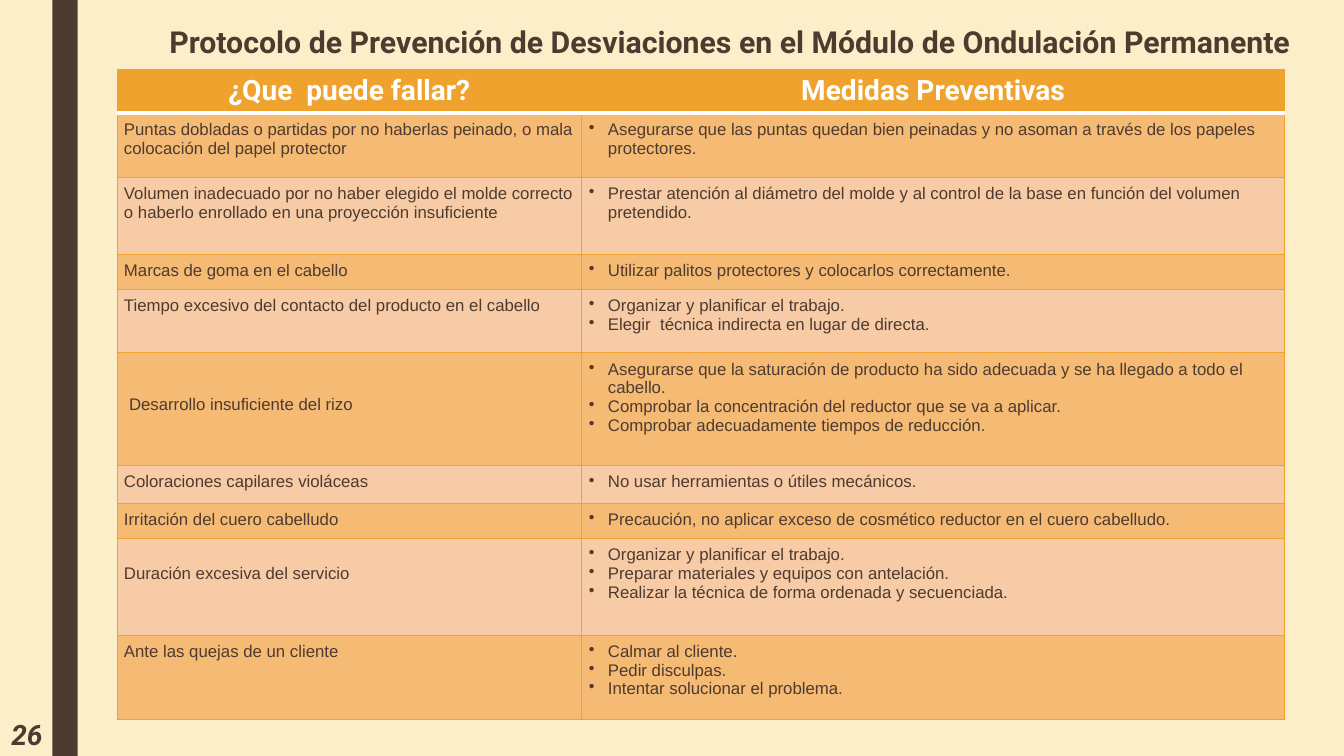
"""Build the slide on preventing deviations in the waving module."""
from dataclasses import dataclass

from lxml import etree
from pptx import Presentation
from pptx import util as u
from pptx.dml.color import RGBColor
from pptx.enum import shapes, text
from pptx.oxml import ns


@dataclass(frozen=True)
class Theme:
    cream: str = "FBEEC9"
    brown: str = "4E3B30"
    orange: str = "F0A22E"
    dark_band: str = "F5BA74"
    light_band: str = "F7CBA5"
    white: str = "FFFFFF"
    heading_font: str = "Roboto"
    body_font: str = "Arial"
    title_size: float = 21.6
    heading_size: float = 20
    body_size: float = 12


theme = Theme()


def style(paragraph, font, size, color, bold=False):
    paragraph.font.name = font
    paragraph.font.size = u.Pt(size)
    paragraph.font.bold = bold
    paragraph.font.color.rgb = RGBColor.from_string(color)


def paint_cell(cell, fill, bottom_color=theme.orange, bottom_width=0.5, top_color=theme.orange, top_width=0.5):
    cell.fill.solid()
    cell.fill.fore_color.rgb = RGBColor.from_string(fill)
    edges = [("lnL", theme.orange, 0.5), ("lnR", theme.orange, 0.5),
             ("lnT", top_color, top_width), ("lnB", bottom_color, bottom_width)]
    properties = cell._tc.get_or_add_tcPr()
    for position, (edge, color, width) in enumerate(edges):
        line = etree.Element(ns.qn(f"a:{edge}"), w=str(u.Pt(width)))
        solid = etree.SubElement(line, ns.qn("a:solidFill"))
        etree.SubElement(solid, ns.qn("a:srgbClr"), val=color)
        properties.insert(position, line)


headings = ["¿Que  puede fallar?", "Medidas Preventivas"]
deviations = [
    (0.64, "Puntas dobladas o partidas por no haberlas peinado, o mala colocación del papel protector",
     ["Asegurarse que las puntas quedan bien peinadas y no asoman a través de los papeles protectores."]),
    (0.76, "Volumen inadecuado por no haber elegido el molde correcto o haberlo enrollado en una proyección insuficiente",
     ["Prestar atención al diámetro del molde y al control de la base en función del volumen pretendido."]),
    (0.35, "Marcas de goma en el cabello",
     ["Utilizar palitos protectores y colocarlos correctamente."]),
    (0.63, "Tiempo excesivo del contacto del producto en el cabello",
     ["Organizar y planificar el trabajo.",
      "Elegir  técnica indirecta en lugar de directa."]),
    (1.12, "Desarrollo insuficiente del rizo",
     ["Asegurarse que la saturación de producto ha sido adecuada y se ha llegado a todo el cabello.",
      "Comprobar la concentración del reductor que se va a aplicar.",
      "Comprobar adecuadamente tiempos de reducción."]),
    (0.37, "Coloraciones capilares violáceas",
     ["No usar herramientas o útiles mecánicos."]),
    (0.35, "Irritación del cuero cabelludo",
     ["Precaución, no aplicar exceso de cosmético reductor en el cuero cabelludo."]),
    (0.96, "Duración excesiva del servicio",
     ["Organizar y planificar el trabajo.",
      "Preparar materiales y equipos con antelación.",
      "Realizar la técnica de forma ordenada y secuenciada."]),
    (0.84, "Ante las quejas de un cliente",
     ["Calmar al cliente.", "Pedir disculpas.", "Intentar solucionar el problema."]),
]
lowered_failures = {5: (0.12, 0.42), 8: (0.07, 0.26)}

deck = Presentation()
deck.slide_width, deck.slide_height = u.Inches(13.33), u.Inches(7.5)
slide = deck.slides.add_slide(deck.slide_layouts[5])
slide.background.fill.solid()
slide.background.fill.fore_color.rgb = RGBColor.from_string(theme.cream)

side_bar = slide.shapes.add_shape(shapes.MSO_SHAPE.RECTANGLE, u.Inches(0.52), 0, u.Inches(0.25), deck.slide_height)
side_bar.shadow.inherit = False
side_bar.fill.solid()
side_bar.fill.fore_color.rgb = RGBColor.from_string(theme.brown)
side_bar.line.fill.background()

title = slide.shapes.title
title.left, title.top, title.width, title.height = u.Inches(1.58), 0, u.Inches(11.4), u.Inches(0.67)
title.text_frame.text = "Protocolo de Prevención de Desviaciones en el Módulo de Ondulación Permanente"
title.text_frame.auto_size = text.MSO_AUTO_SIZE.NONE
title.text_frame.vertical_anchor = text.MSO_ANCHOR.TOP
title_line = title.text_frame.paragraphs[0]
title_line.alignment = text.PP_ALIGN.LEFT
title_line.line_spacing = 1.5
style(title_line, theme.heading_font, theme.title_size, theme.brown, bold=True)

protocol = slide.shapes.add_table(len(deviations) + 1, 2, u.Inches(1.16), u.Inches(0.69),
                                  u.Inches(11.58), u.Inches(6.45)).table
protocol.horz_banding = False
for column, width in zip(protocol.columns, [4.61, 6.97]):
    column.width = u.Inches(width)

protocol.rows[0].height = u.Inches(0.43)
for cell, heading in zip(protocol.rows[0].cells, headings):
    cell.text = heading
    heading_line = cell.text_frame.paragraphs[0]
    heading_line.alignment = text.PP_ALIGN.CENTER
    style(heading_line, theme.heading_font, theme.heading_size, theme.white, bold=True)
    paint_cell(cell, theme.orange, bottom_color=theme.white, bottom_width=2.75)

for number, (height, failure, measures) in enumerate(deviations, start=1):
    row = protocol.rows[number]
    row.height = u.Inches(height)
    failure_cell, measures_cell = row.cells
    failure_cell.text = failure
    measures_cell.text = "\n".join(measures)
    for cell in row.cells:
        cell.margin_left = cell.margin_right = cell.margin_top = cell.margin_bottom = u.Inches(0.07)
        for paragraph in cell.text_frame.paragraphs:
            style(paragraph, theme.body_font, theme.body_size, theme.brown)
        band = theme.dark_band if number % 2 else theme.light_band
        if number == 1:
            paint_cell(cell, band, top_color=theme.white, top_width=2.75)
        else:
            paint_cell(cell, band)
    if number in lowered_failures:
        left, top = lowered_failures[number]
        failure_cell.margin_left, failure_cell.margin_top = u.Inches(left), u.Inches(top)
    for measure in measures_cell.text_frame.paragraphs:
        properties = measure._p.get_or_add_pPr()
        properties.set("marL", str(u.Inches(0.19)))
        properties.set("indent", str(u.Inches(-0.19)))
        bullet = etree.Element(ns.qn("a:buChar"), char="•")
        properties.insert(0, bullet)

page_number = slide.shapes.add_textbox(u.Inches(-0.07), u.Inches(7.06), u.Inches(0.59), u.Inches(0.44)).text_frame
page_number.word_wrap = True
page_number.vertical_anchor = text.MSO_ANCHOR.MIDDLE
page_number.text = "26"
page_line = page_number.paragraphs[0]
page_line.alignment = text.PP_ALIGN.RIGHT
style(page_line, theme.heading_font, theme.heading_size, theme.brown, bold=True)
page_line.font.italic = True

deck.save("out.pptx")
